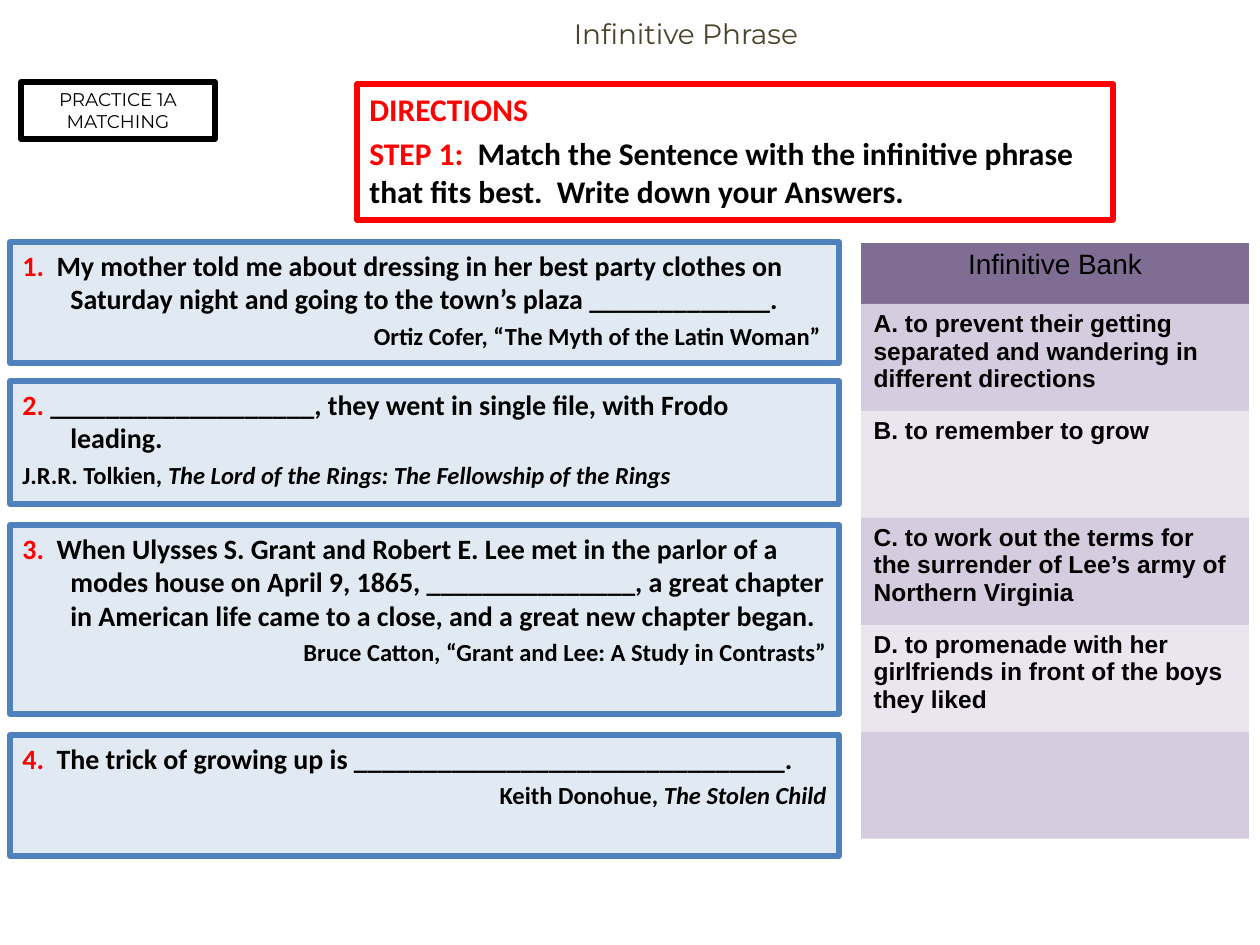
from lxml.etree import SubElement
from pptx import Presentation
from pptx.dml.color import RGBColor
from pptx.enum.shapes import MSO_SHAPE
from pptx.enum.text import MSO_ANCHOR, PP_ALIGN
from pptx.oxml.ns import qn
from pptx.util import Emu, Pt

BLACK = RGBColor(0x00, 0x00, 0x00)
WHITE = RGBColor(0xFF, 0xFF, 0xFF)
RED = RGBColor(0xFF, 0x00, 0x00)
OLIVE = RGBColor(0x49, 0x44, 0x29)
BLUE = RGBColor(0x4F, 0x81, 0xBD)
PALE_BLUE = RGBColor(0xDA, 0xE5, 0xF1)
PURPLE = RGBColor(0x5F, 0x49, 0x7A)
LILAC = RGBColor(0xCC, 0xC0, 0xD9)
PALE_LILAC = RGBColor(0xE5, 0xDF, 0xEC)

NO_TABLE_STYLE = "{2D5ABB26-0587-4C30-8999-92F81FD0307C}"

LEFT, RIGHT = PP_ALIGN.LEFT, PP_ALIGN.RIGHT

# top, height, number, sentence, author, work in italics, alignment of the credit
QUESTIONS = [
    (242, 121, "1.  ", "My mother told me about dressing in her best party clothes on "
     "Saturday night and going to the town’s plaza _____________.",
     "Ortiz Cofer, “The Myth of the Latin Woman” ", "", RIGHT),
    (381, 123, "2. ", "___________________, they went in single file, with Frodo leading.",
     "J.R.R. Tolkien, ", "The Lord of the Rings: The Fellowship of the Rings", LEFT),
    (525, 189, "3.  ", "When Ulysses S. Grant and Robert E. Lee met in the parlor of a modes "
     "house on April 9, 1865, _______________, a great chapter in American life came to a "
     "close, and a great new chapter began.",
     "Bruce Catton, “Grant and Lee: A Study in Contrasts”", "", RIGHT),
    (735, 121, "4.  ", "The trick of growing up is _______________________________.",
     "Keith Donohue, ", "The Stolen Child", RIGHT),
]

INFINITIVES = [
    "A. to prevent their getting separated and wandering in different directions",
    "B. to remember to grow",
    "C. to work out the terms for the surrender of Lee’s army of Northern Virginia",
    "D. to promenade with her girlfriends in front of the boys they liked",
    "",
]


def px(length):
    return Emu(round(length * 914400 / 126))


class Worksheet:
    """Holds the style and the current slide."""

    heading_font, body_font, bank_font = "Montserrat", "Calibri", "Arial"
    border = Pt(3)

    def __init__(self, slide):
        self.slide = slide

    def paint(self, fill, color, opacity):
        """Fill with a colour at an opacity in percent."""
        fill.solid()
        fill.fore_color.rgb = color
        if opacity < 100:
            node = fill._xPr.find(".//" + qn("a:srgbClr"))
            SubElement(node, qn("a:alpha")).set("val", str(opacity * 1000))

    def span(self, para, text, font, size, color=BLACK, bold=False, italic=False):
        span = para.add_run()
        span.text = text
        span.font.name, span.font.size = font, Pt(size)
        span.font.color.rgb = color
        span.font.bold, span.font.italic = bold, italic

    def hang(self, para):
        properties = para._p.get_or_add_pPr()
        properties.set("marL", str(px(48)))
        properties.set("indent", str(-px(48)))

    def frame(self, x, y, width, height, fill, line, opacity=100):
        """Add a bordered box and return its text frame."""
        box = self.slide.shapes.add_shape(
            MSO_SHAPE.RECTANGLE, px(x), px(y), px(width), px(height))
        box.shadow.inherit = False
        self.paint(box.fill, fill, opacity)
        box.line.color.rgb = line
        box.line.width = self.border
        frame = box.text_frame
        frame.word_wrap = True
        frame.vertical_anchor = MSO_ANCHOR.TOP
        frame.paragraphs[0].alignment = LEFT
        return frame

    def title(self, x, y, width, height, text):
        box = self.slide.shapes.add_textbox(px(x), px(y), px(width), px(height))
        box.text_frame.word_wrap = True
        para = box.text_frame.paragraphs[0]
        para.alignment = PP_ALIGN.CENTER
        para._p.get_or_add_pPr().set("marL", str(px(48)))
        self.span(para, text, self.heading_font, 16, OLIVE)

    def label(self, x, y, width, height, text):
        para = self.frame(x, y, width, height, WHITE, BLACK).paragraphs[0]
        para.alignment = PP_ALIGN.CENTER
        self.span(para, text, self.heading_font, 10.5)

    def directions(self, x, y, width, height, heading, step, text):
        frame = self.frame(x, y, width, height, WHITE, RED, 75)
        self.span(frame.paragraphs[0], heading, self.body_font, 18, RED, True)
        para = frame.add_paragraph()
        para.alignment = LEFT
        para.space_before = Pt(3.6)
        self.span(para, step, self.body_font, 18, RED, True)
        self.span(para, text, self.body_font, 18, BLACK, True)

    def question(self, top, height, number, sentence, author, work, alignment):
        frame = self.frame(10, top, 829, height, PALE_BLUE, BLUE, 80)
        para = frame.paragraphs[0]
        self.hang(para)
        self.span(para, number, self.body_font, 16, RED, True)
        self.span(para, sentence, self.body_font, 16, BLACK, True)
        credit = frame.add_paragraph()
        credit.alignment = alignment
        credit.space_before = Pt(3)
        self.hang(credit)
        self.span(credit, author, self.body_font, 14, BLACK, True)
        if work:
            self.span(credit, work, self.body_font, 14, BLACK, True, True)

    def bank(self, x, y, width, header_height, row_height, heading, entries):
        height = header_height + row_height * len(entries)
        table = self.slide.shapes.add_table(
            len(entries) + 1, 1, px(x), px(y), px(width), px(height)).table
        table.first_row = table.horz_banding = False
        table._tbl.tblPr.find(qn("a:tableStyleId")).text = NO_TABLE_STYLE
        for index, text in enumerate([heading, *entries]):
            is_header = index == 0
            table.rows[index].height = px(header_height if is_header else row_height)
            cell = table.cell(index, 0)
            color = PURPLE if is_header else LILAC if index % 2 else PALE_LILAC
            self.paint(cell.fill, color, 80)
            para = cell.text_frame.paragraphs[0]
            para.alignment = PP_ALIGN.CENTER if is_header else LEFT
            if text:
                size = 16 if is_header else 14
                self.span(para, text, self.bank_font, size, bold=not is_header)


def main():
    deck = Presentation()
    deck.slide_width, deck.slide_height = px(1260), px(945)
    sheet = Worksheet(deck.slides.add_slide(deck.slide_layouts[6]))

    sheet.title(221, 10, 882, 73, "Infinitive Phrase")
    sheet.label(21, 82, 194, 57, "PRACTICE 1A MATCHING")
    sheet.directions(357, 84, 756, 136, "DIRECTIONS", "STEP 1:  ",
                     "Match the Sentence with the infinitive phrase that fits best.  "
                     "Write down your Answers.")
    for question in QUESTIONS:
        sheet.question(*question)
    sheet.bank(861, 243, 388, 61, 107, "Infinitive Bank", INFINITIVES)

    deck.save("out.pptx")


if __name__ == "__main__":
    main()
